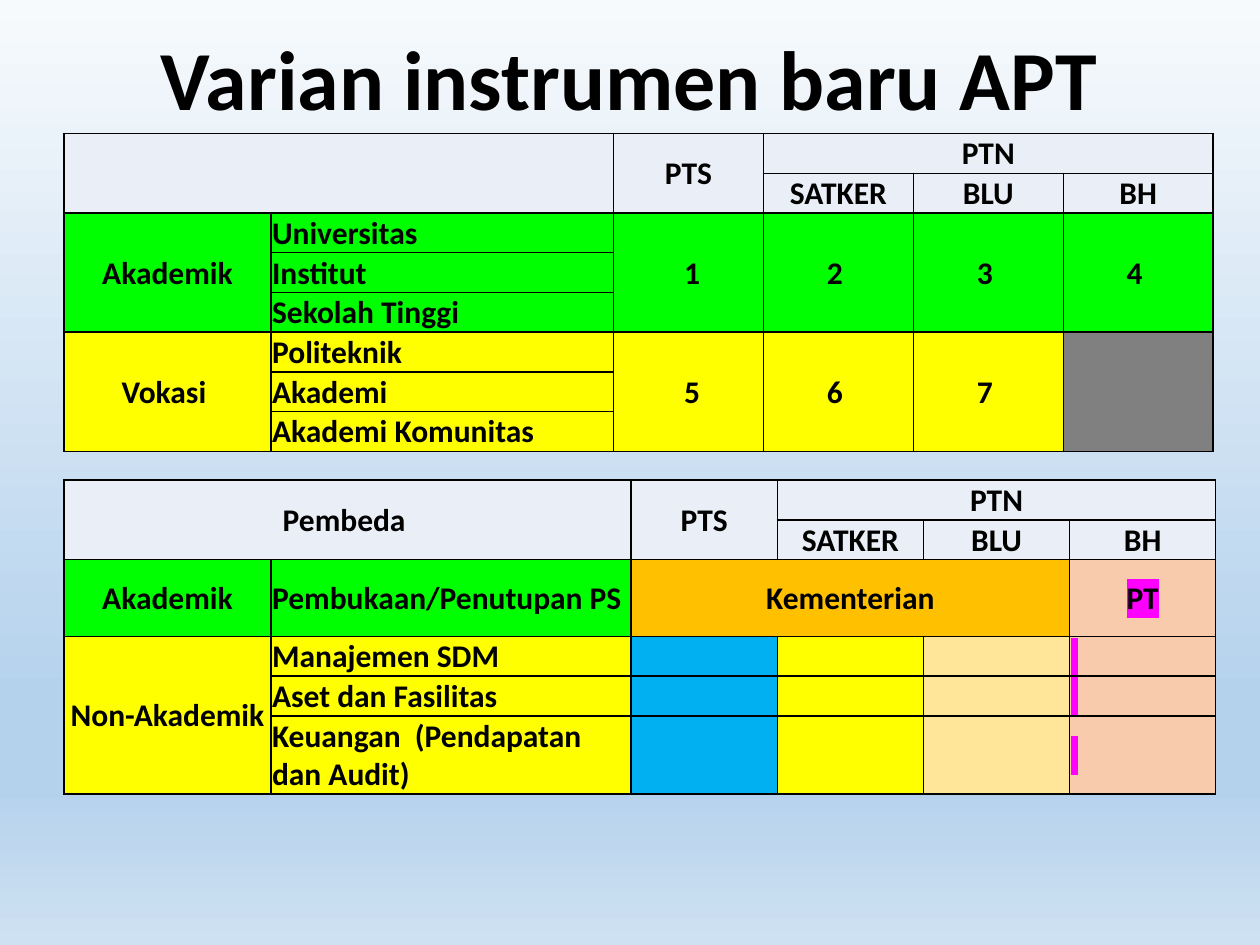
from lxml.etree import SubElement as Sub
from pptx import Presentation
from pptx.dml.color import RGBColor as Rgb
from pptx.enum.text import MSO_ANCHOR as Anchor, PP_ALIGN as Align
from pptx.oxml.ns import qn
from pptx.util import Inches, Pt

HUES = {
    "black": "000000", "head": "EAEFF7", "green": "00FF00", "yellow": "FFFF00",
    "gray": "808080", "gold": "FFC000", "blue": "00B0F0", "cream": "FFE699",
    "peach": "F8CBAD", "pink": "FF00FF",
    "top": "F7FAFD", "mid": "B5D2EC", "low": "CEE1F2",
}
SKY = [(0, "top"), (74, "mid"), (83, "mid"), (100, "low")]
FONT = {"name": "Calibri", "bold": True}
CELL = {
    "margin_left": Inches(0.01), "margin_right": Inches(0.01),
    "margin_top": Inches(0.01), "margin_bottom": 0,
    "vertical_anchor": Anchor.MIDDLE,
}


def apply(item, vals):
    """Set each attribute of item from a dict."""
    for key, val in vals.items():
        setattr(item, key, val)


def tint(node, tag, hue):
    """Add a child that holds one colour and return it."""
    child = Sub(node, qn(tag))
    Sub(child, qn("a:srgbClr")).set("val", HUES[hue])
    return child


def paint_sky(slide):
    """Fill the background with a gradient from top to bottom."""
    fill = slide.background.fill
    fill.gradient()
    fill.gradient_angle = 270
    stops = next(slide.element.iter(qn("a:gsLst")))
    for stop in list(stops):
        stops.remove(stop)
    for pos, hue in SKY:
        tint(stops, "a:gs", hue).set("pos", str(pos * 1000))


def write(para, text, size, align, mark=None):
    """Put one bold run in a paragraph, with an optional highlight."""
    para.alignment = align
    run = para.add_run()
    run.text = text
    apply(run.font, {**FONT, "size": Pt(size)})
    run.font.color.rgb = Rgb.from_string(HUES["black"])
    if mark:
        props = run.font._element
        props.find(qn("a:latin")).addprevious(tint(props, "a:highlight", mark))


def add_title(slide, box, text):
    """Place the centred title in its box."""
    frame = slide.shapes.add_textbox(*map(Inches, box)).text_frame
    frame.word_wrap = True
    write(frame.paragraphs[0], text, 48, Align.CENTER)


def rule(cell):
    """Draw a thin black line on all four sides of a cell."""
    props = cell._tc.get_or_add_tcPr()
    for side in "LRTB":
        line = Sub(props, qn(f"a:ln{side}"))
        line.set("w", str(Pt(1)))
        tint(line, "a:solidFill", "black")


def add_grid(slide, box, cols, rows, parts):
    """Build a table from parts of row, column, text, hue, spans and mark."""
    shape = slide.shapes.add_table(len(rows), len(cols), *map(Inches, box))
    table = shape.table
    apply(table, {"first_row": False, "horz_banding": False})
    for col, width in zip(table.columns, cols):
        col.width = Inches(width)
    for row, height in zip(table.rows, rows):
        row.height = Inches(height)
    for cell in table.iter_cells():
        apply(cell, CELL)
        rule(cell)
    for row, col, text, hue, down, across, mark in parts:
        cell = table.cell(row, col)
        if down * across > 1:
            cell.merge(table.cell(row + down - 1, col + across - 1))
        cell.fill.solid()
        cell.fill.fore_color.rgb = Rgb.from_string(HUES[hue])
        if text:
            left = col == 1 or not text.strip()
            align = Align.LEFT if left else Align.CENTER
            write(cell.text_frame.paragraphs[0], text, 18, align, mark)


def part(row, col, text, hue, down=1, across=1, mark=None):
    """Describe one cell of a grid."""
    return row, col, text, hue, down, across, mark


def head(label):
    """List the two header rows that both grids share."""
    return [
        part(0, 0, label, "head", 2, 2),
        part(0, 2, "PTS", "head", 2),
        part(0, 3, "PTN", "head", 1, 3),
    ] + [part(1, 3 + i, t, "head") for i, t in enumerate(["SATKER", "BLU", "BH"])]


def group(row, label, hue, kinds):
    """List a group label and the kinds beside it."""
    return [part(row, 0, label, hue, len(kinds))] + [
        part(row + i, 1, kind, hue) for i, kind in enumerate(kinds)]


def add_forms(slide, box):
    """Place the grid of numbered forms."""
    parts = head("")
    parts += group(2, "Akademik", "green", ["Universitas", "Institut", "Sekolah Tinggi"])
    parts += group(5, "Vokasi ", "yellow", ["Politeknik", "Akademi", "Akademi Komunitas"])
    for row, hue, marks in [(2, "green", [" 1", "2 ", "3 ", "4 "]),
                            (5, "yellow", [" 5", "6 ", "7 "])]:
        parts += [part(row, 2 + i, t, hue, 3) for i, t in enumerate(marks)]
    parts.append(part(5, 5, "", "gray", 3))
    add_grid(slide, box, [1.64, 2.72] + [1.19] * 4, [0.31] * 8, parts)


def add_traits(slide, box):
    """Place the grid of traits that set the types apart."""
    parts = head("Pembeda ")
    parts += group(2, "Akademik", "green", ["Pembukaan/Penutupan PS"])
    parts += group(3, "Non-Akademik", "yellow", [
        "Manajemen SDM", "Aset dan Fasilitas", "Keuangan  (Pendapatan dan Audit)"])
    parts += [part(2, 2, "Kementerian", "gold", 1, 3),
              part(2, 5, "PT", "peach", mark="pink")]
    for row in range(3, 6):
        parts += [part(row, 2 + i, "", hue)
                  for i, hue in enumerate(["blue", "yellow", "cream"])]
        parts.append(part(row, 5, " ", "peach", mark="pink"))
    rows = [0.31, 0.31, 0.61] + [0.31, 0.31, 0.61]
    add_grid(slide, box, [1.64, 2.86] + [1.16] * 4, rows, parts)


def main():
    """Build the slide and save it."""
    deck = Presentation()
    apply(deck, {"slide_width": Inches(10), "slide_height": Inches(7.5)})
    slide = deck.slides.add_slide(deck.slide_layouts[6])
    paint_sky(slide)
    add_forms(slide, (0.51, 1.06, 9.12, 2.48))
    add_traits(slide, (0.51, 3.81, 9.12, 2.46))
    add_title(slide, (0.51, 0.16, 8.97, 0.91), "Varian instrumen baru APT")
    deck.save("out.pptx")


if __name__ == "__main__":
    main()
